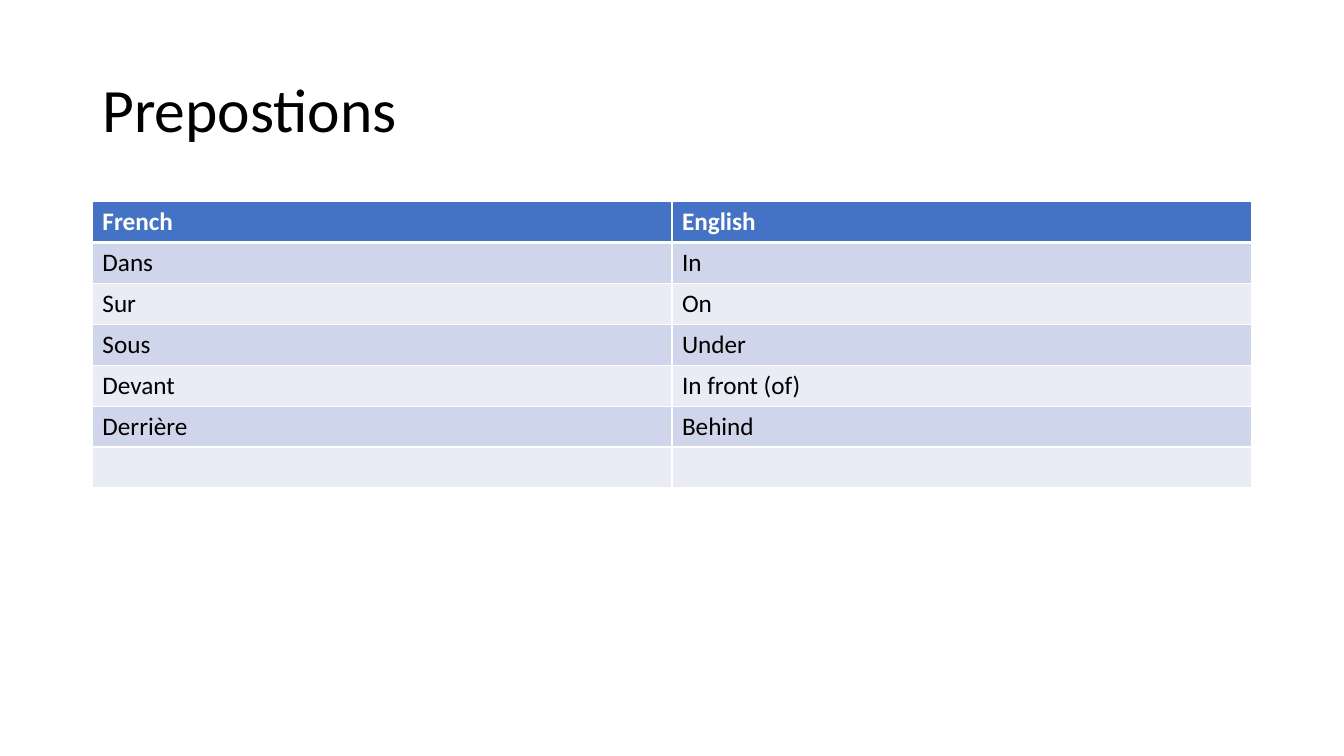
import dataclasses

import pptx
import pptx.dml.color
import pptx.enum.text
import pptx.oxml
import pptx.oxml.ns
import pptx.util

EMU_PER_PX = 9525  # 96 px to the inch


@dataclasses.dataclass(frozen=True)
class Theme:
    font: str = "Calibri"
    title_size: int = 44
    table_size: int = 18
    text: str = "000000"
    header_text: str = "FFFFFF"
    header_fill: str = "4472C4"
    band_fills: tuple = ("CFD5EA", "E9EBF5")
    border: str = "FFFFFF"
    thin: int = 1
    thick: int = 3


THEME = Theme()

VOCABULARY = [
    ("French", "English"),
    ("Dans", "In"),
    ("Sur", "On"),
    ("Sous", "Under"),
    ("Devant", "In front (of)"),
    ("Derrière", "Behind"),
    ("", ""),
]


def px(length):
    return pptx.util.Emu(length * EMU_PER_PX)


def rgb(value):
    return pptx.dml.color.RGBColor.from_string(value)


def style_text(para, size, color, bold=False):
    for span in para.runs:
        span.font.name = THEME.font
        span.font.size = pptx.util.Pt(size)
        span.font.bold = bold
        span.font.color.rgb = rgb(color)


def add_title(page, text, left, top, width, height):
    box = page.shapes.add_textbox(px(left), px(top), px(width), px(height))
    frame = box.text_frame
    frame.word_wrap = True
    frame.vertical_anchor = pptx.enum.text.MSO_ANCHOR.MIDDLE
    frame.text = text
    para = frame.paragraphs[0]
    para.line_spacing = 0.9
    style_text(para, THEME.title_size, THEME.text)


def set_borders(cell, top, bottom):
    """Draw the four cell borders; top and bottom are widths in points."""
    properties = cell._tc.get_or_add_tcPr()
    widths = {"lnL": THEME.thin, "lnR": THEME.thin, "lnT": top, "lnB": bottom}
    for side, width in widths.items():
        properties.append(pptx.oxml.parse_xml(
            f'<a:{side} {pptx.oxml.ns.nsdecls("a")} w="{pptx.util.Pt(width)}">'
            f'<a:solidFill><a:srgbClr val="{THEME.border}"/></a:solidFill>'
            f'</a:{side}>'))


def fill_cell(cell, text, row):
    is_header = row == 0
    # The thick rule is shared by the header and the first body row
    set_borders(cell,
                top=THEME.thick if row == 1 else THEME.thin,
                bottom=THEME.thick if is_header else THEME.thin)
    cell.fill.solid()
    cell.fill.fore_color.rgb = rgb(
        THEME.header_fill if is_header else THEME.band_fills[(row - 1) % 2])
    cell.text_frame.text = text
    style_text(cell.text_frame.paragraphs[0], THEME.table_size,
               THEME.header_text if is_header else THEME.text, is_header)


def add_table(page, rows, left, top, width, row_height):
    table = page.shapes.add_table(
        len(rows), len(rows[0]), px(left), px(top),
        px(width), px(row_height * len(rows))).table
    for row, texts in enumerate(rows):
        table.rows[row].height = px(row_height)
        for column, text in enumerate(texts):
            fill_cell(table.cell(row, column), text, row)


def main():
    deck = pptx.Presentation()
    deck.slide_width, deck.slide_height = px(1280), px(720)
    page = deck.slides.add_slide(deck.slide_layouts[6])

    # Heading
    add_title(page, "Prepostions", left=88, top=38, width=1104, height=139)

    # Vocabulary table
    add_table(page, VOCABULARY, left=88, top=192, width=1104, row_height=39)

    deck.save("out.pptx")


if __name__ == "__main__":
    main()
